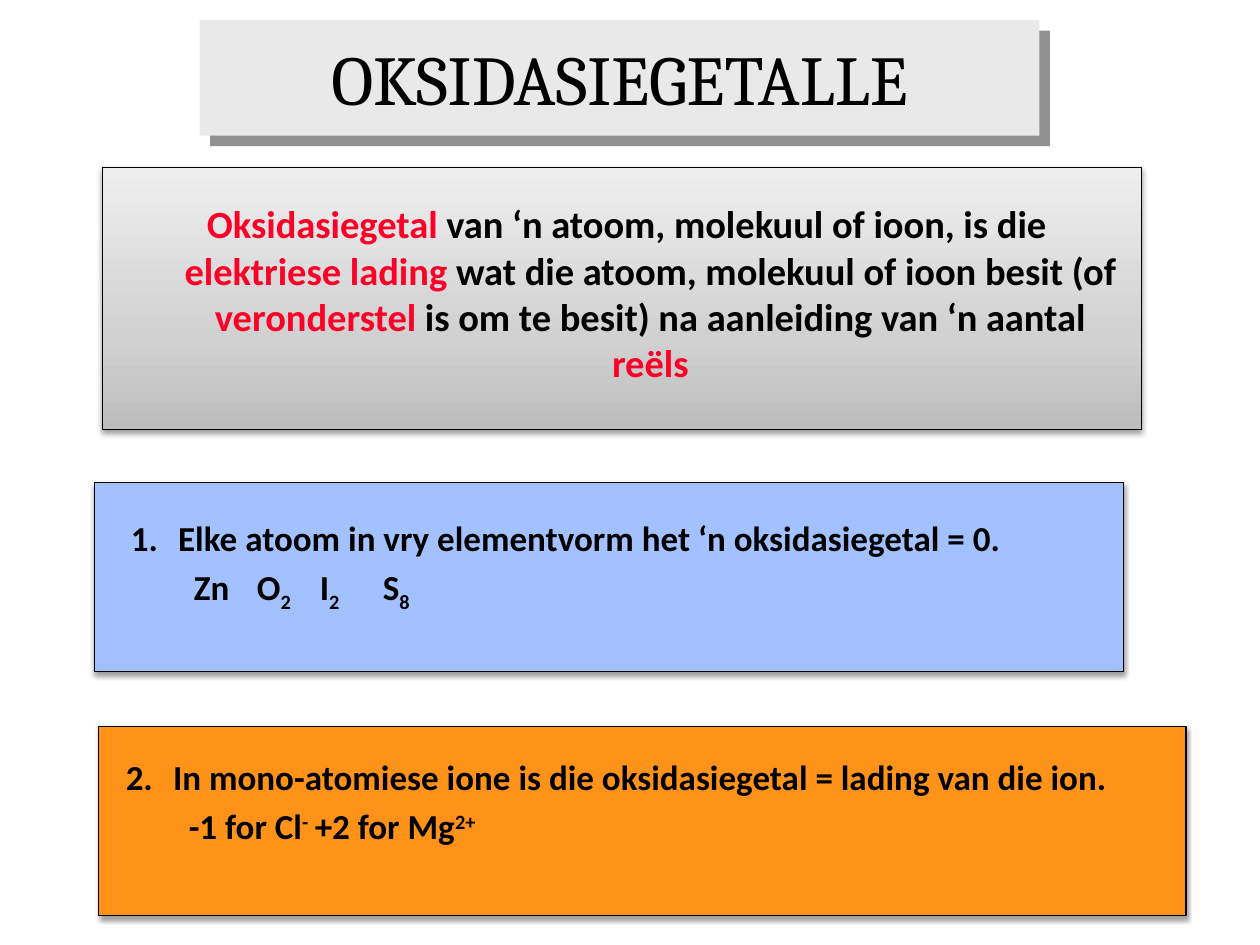
from copy import deepcopy
from dataclasses import dataclass

from lxml import etree
from pptx import Presentation
from pptx.dml.color import RGBColor
from pptx.enum.shapes import MSO_SHAPE
from pptx.enum.text import MSO_ANCHOR, PP_ALIGN
from pptx.oxml.ns import qn
from pptx.util import Pt

RECTANGLE = MSO_SHAPE.RECTANGLE
CENTER = PP_ALIGN.CENTER
TOP, MIDDLE = MSO_ANCHOR.TOP, MSO_ANCHOR.MIDDLE
TITLE_ONLY = 5
BASELINES = {"sub": -25, "super": 30}


@dataclass(frozen=True)
class Theme:
    title_font: str = "Cambria"
    body_font: str = "Calibri"
    title_size: float = 40
    definition_size: float = 22
    rule_size: float = 20
    text: str = "000000"
    accent: str = "FC0128"
    title_fill: str = "E9E9E9"
    title_shadow: str = "919191"
    gradient: tuple = ((0, "BDBDBD"), (0.35, "D1D1D1"), (1, "EEEEEE"))
    element_fill: str = "A2C1FE"
    ion_fill: str = "FF9218"
    hanging: float = 27


THEME = Theme()


def color(value):
    return RGBColor.from_string(value)


def points(box):
    return [Pt(length) for length in box]


def add_shadow(shape, value, opacity, blur, distance, angle):
    effects = etree.SubElement(shape._element.spPr, qn("a:effectLst"))
    shadow = etree.SubElement(
        effects, qn("a:outerShdw"), blurRad=str(Pt(blur)), dist=str(Pt(distance)),
        dir=str(angle * 60000), algn="ctr", rotWithShape="0")
    tone = etree.SubElement(shadow, qn("a:srgbClr"), val=value)
    etree.SubElement(tone, qn("a:alpha"), val=str(opacity * 1000))


def format_run(run, font, size, value, bold=True):
    run.font.name = font
    run.font.size = Pt(size)
    run.font.bold = bold
    run.font.color.rgb = color(value)


def set_margins(paragraph, left, indent):
    properties = paragraph._p.get_or_add_pPr()
    properties.set("marL", str(Pt(left)))
    properties.set("indent", str(Pt(indent)))
    return properties


def fill_gradient(shape, stops):
    """Vertical gradient, first stop at the bottom."""
    shape.fill.gradient()
    shape.fill.gradient_angle = 90
    stop_list = shape._element.spPr.find(qn("a:gradFill")).find(qn("a:gsLst"))
    while len(stop_list) < len(stops):
        stop_list.append(deepcopy(stop_list[-1]))
    for stop, (position, value) in zip(shape.fill.gradient_stops, stops):
        stop.position = position
        stop.color.rgb = color(value)


def add_panel(slide, box, text_box):
    """Group an outlined rectangle with its text; return both."""
    group = slide.shapes.add_group_shape()
    panel = group.shapes.add_shape(RECTANGLE, *points(box))
    panel.line.color.rgb = color(THEME.text)
    panel.line.width = Pt(0.75)
    text_frame = group.shapes.add_textbox(*points(text_box)).text_frame
    text_frame.word_wrap = True
    text_frame.vertical_anchor = TOP
    return panel, text_frame


def add_title(slide, box, text):
    title = slide.shapes.title
    title.left, title.top, title.width, title.height = points(box)
    title.fill.solid()
    title.fill.fore_color.rgb = color(THEME.title_fill)
    add_shadow(title, THEME.title_shadow, 100, 0, 8.5, 45)
    text_frame = title.text_frame
    text_frame.text = text
    text_frame.vertical_anchor = MIDDLE
    paragraph = text_frame.paragraphs[0]
    paragraph.alignment = CENTER
    format_run(paragraph.runs[0], THEME.title_font, THEME.title_size, THEME.text, False)


def add_definition(slide, box, text_box, parts):
    """Parts alternate between accent and plain text, accent first."""
    panel, text_frame = add_panel(slide, box, text_box)
    fill_gradient(panel, THEME.gradient)
    add_shadow(panel, THEME.text, 38, 3.1, 1.6, 90)
    paragraph = text_frame.paragraphs[0]
    paragraph.alignment = CENTER
    set_margins(paragraph, THEME.hanging, -THEME.hanging)
    for index, part in enumerate(parts):
        run = paragraph.add_run()
        run.text = part
        value = THEME.text if index % 2 else THEME.accent
        format_run(run, THEME.body_font, THEME.definition_size, value)


def add_rule(slide, box, text_box, fill, number, rule, examples, tabs):
    """A numbered rule above a line of examples set on tab stops."""
    panel, text_frame = add_panel(slide, box, text_box)
    panel.fill.solid()
    panel.fill.fore_color.rgb = color(fill)
    add_shadow(panel, THEME.text, 38, 3.1, 1.6, 90)

    # Numbered sentence
    text_frame.text = rule
    paragraph = text_frame.paragraphs[0]
    properties = set_margins(paragraph, THEME.hanging, -THEME.hanging)
    etree.SubElement(properties, qn("a:buFont"), typeface=THEME.body_font)
    etree.SubElement(properties, qn("a:buAutoNum"), type="arabicPeriod", startAt=str(number))
    format_run(paragraph.runs[0], THEME.body_font, THEME.rule_size, THEME.text)

    # Examples
    paragraph = text_frame.add_paragraph()
    paragraph.space_before = Pt(THEME.rule_size * 0.2)
    tab_list = etree.SubElement(set_margins(paragraph, 0, 0), qn("a:tabLst"))
    for position in tabs:
        etree.SubElement(tab_list, qn("a:tab"), pos=str(Pt(position)), algn="l")
    for text, script in examples:
        run = paragraph.add_run()
        run.text = text
        format_run(run, THEME.body_font, THEME.rule_size, THEME.text)
        if script:
            run.font._element.set("baseline", str(BASELINES[script] * 1000))


def main():
    presentation = Presentation()
    presentation.slide_width, presentation.slide_height = Pt(720), Pt(540)
    slide = presentation.slides.add_slide(presentation.slide_layouts[TITLE_ONLY])

    add_title(slide, (114, 11.5, 480, 66), "OKSIDASIEGETALLE")
    add_rule(
        slide, (56.2, 415.2, 621.5, 108), (64.8, 428.4, 600.5, 78.5), THEME.ion_fill, 2,
        "In mono-atomiese ione is die oksidasiegetal = lading van die ion.",
        [("\t-1 for Cl", None), ("-", "super"), ("\t+2 for Mg", None), ("2+", "super")],
        (31.4, 172))
    add_definition(
        slide, (58.5, 95.8, 594, 149.8), (69.8, 111, 576.7, 118),
        ["Oksidasiegetal", " van ‘n atoom, molekuul of ioon, is die ",
         "elektriese lading", " wat die atoom, molekuul of ioon besit (of ",
         "veronderstel", " is om te besit) na aanleiding van ‘n aantal ", "reëls"])
    add_rule(
        slide, (54, 275.8, 588.2, 108), (67.7, 291.6, 536.4, 84.2), THEME.element_fill, 1,
        "Elke atoom in vry elementvorm het ‘n oksidasiegetal = 0.",
        [("\tZn\tO", None), ("2", "sub"), ("\tI", None), ("2", "sub"),
         ("\tS", None), ("8", "sub")],
        (31, 78, 125.5, 164))

    presentation.save("out.pptx")


if __name__ == "__main__":
    main()
